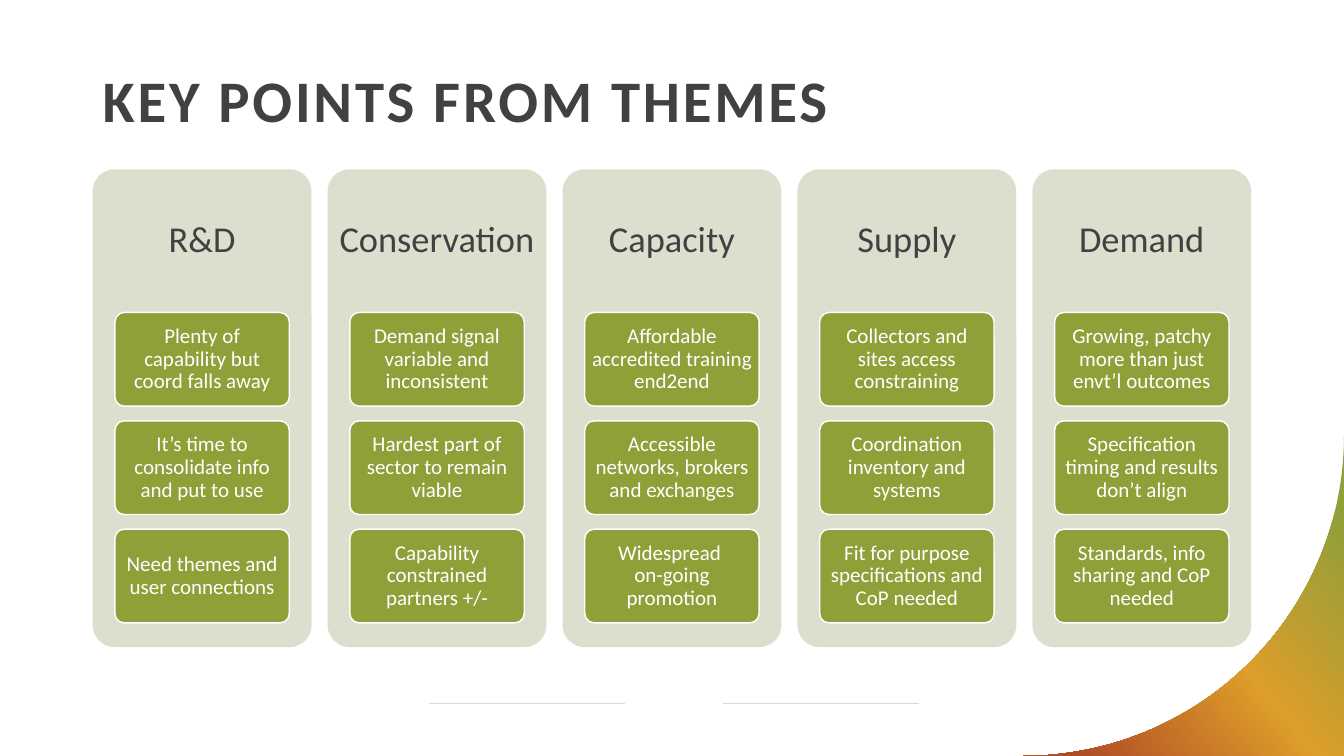
from copy import deepcopy
from dataclasses import dataclass
from math import cos, pi, sin

from pptx import Presentation
from pptx.dml.color import RGBColor
from pptx.enum.shapes import MSO_CONNECTOR as CONN, MSO_SHAPE as SHAPE
from pptx.enum.text import MSO_ANCHOR as ANCHOR, PP_ALIGN as ALIGN
from pptx.oxml.ns import qn
from pptx.oxml.xmlchemy import OxmlElement
from pptx.shapes.autoshape import Shape
from pptx.slide import Slide
from pptx.util import Inches, Pt

FONT = "Calibri"
COLORS = {
    "text": "414042", "white": "FFFFFF", "rule": "D9D8DA", "card": "DCDFCE",
    "green": "919F39", "amber": "DD9E2A", "rust": "AF4C26",
}
SLIDE_W, SLIDE_H = 13.33, 7.5

# Column grid
LEFT, TOP = 0.92, 1.68
CARD_W, CARD_H, CARD_PITCH = 2.17, 4.74, 2.33
HEAD_H = 1.42
TILE_W, TILE_H = 1.73, 0.93
TILE_TOP, LAST_TILE_TOP = 3.1, 5.25


@dataclass
class Theme:
    name: str
    points: list[str]


THEMES = [
    Theme("R&D", [
        "Plenty of capability but coord falls away",
        "It’s time to consolidate info and put to use",
        "Need themes and user connections"]),
    Theme("Conservation", [
        "Demand signal variable and inconsistent",
        "Hardest part of sector to remain viable",
        "Capability constrained partners +/-"]),
    Theme("Capacity", [
        "Affordable accredited training end2end",
        "Accessible networks, brokers and exchanges",
        "Widespread \non-going promotion"]),
    Theme("Supply", [
        "Collectors and sites access constraining",
        "Coordination inventory and systems",
        "Fit for purpose specifications and CoP needed"]),
    Theme("Demand", [
        "Growing, patchy more than just envt’l outcomes",
        "Specification timing and results don’t align",
        "Standards, info sharing and CoP needed"]),
]


def rgb(name: str) -> RGBColor:
    return RGBColor.from_string(COLORS[name])


def write(sp: Shape, text: str, size: float, color: str, inset: tuple[float, float],
          align: ALIGN = ALIGN.CENTER, anchor: ANCHOR = ANCHOR.MIDDLE,
          bold: bool = False, spacing: float = 0) -> None:
    tf = sp.text_frame
    tf.word_wrap = True
    tf.vertical_anchor = anchor
    tf.margin_left = tf.margin_right = Inches(inset[0])
    tf.margin_top = tf.margin_bottom = Inches(inset[1])
    p = tf.paragraphs[0]
    p.alignment = align
    p.line_spacing = 0.9
    for i, line in enumerate(text.split("\n")):
        if i:
            p.add_line_break()
        r = p.add_run()
        r.text = line
        r.font.name = FONT
        r.font.size = Pt(size)
        r.font.bold = bold
        r.font.color.rgb = rgb(color)
        if spacing:
            r.font._element.set("spc", str(int(spacing * 100)))


def add_text_box(s: Slide, x: float, y: float, w: float, h: float) -> Shape:
    return s.shapes.add_textbox(Inches(x), Inches(y), Inches(w), Inches(h))


def add_panel(s: Slide, x: float, y: float, w: float, h: float,
              fill: str, line: str | None = None) -> Shape:
    sp = s.shapes.add_shape(SHAPE.ROUNDED_RECTANGLE,
                            Inches(x), Inches(y), Inches(w), Inches(h))
    sp.adjustments[0] = 0.1
    sp.shadow.inherit = False
    sp.fill.solid()
    sp.fill.fore_color.rgb = rgb(fill)
    if line:
        sp.line.color.rgb = rgb(line)
        sp.line.width = Pt(1)
    else:
        sp.line.fill.background()
    return sp


def add_rule(s: Slide, x: float, y: float, w: float) -> None:
    ln = s.shapes.add_connector(CONN.STRAIGHT, Inches(x), Inches(y),
                                Inches(x + w), Inches(y))
    ln.line.color.rgb = rgb("rule")
    ln.line.width = Pt(0.5)
    ln._element.spPr.append(OxmlElement("a:effectLst"))


def add_corner(s: Slide, radius: float, steps: int = 60) -> None:
    cx, cy = SLIDE_W - radius, SLIDE_H - radius
    angles = [pi / 2 * i / steps for i in range(steps + 1)]
    arc = [(Inches(cx + radius * cos(a)), Inches(cy + radius * sin(a))) for a in angles]
    fb = s.shapes.build_freeform(Inches(SLIDE_W), Inches(SLIDE_H))
    fb.add_line_segments(arc, close=True)
    sp = fb.convert_to_shape()
    sp.shadow.inherit = False
    sp.line.fill.background()
    # Three-stop gradient
    sp.fill.gradient()
    sp.fill.gradient_angle = 220
    stops = sp._element.spPr.find(".//" + qn("a:gsLst"))
    stops.append(deepcopy(stops[0]))
    shades = [("green", 0.12), ("amber", 0.5), ("rust", 0.91)]
    for stop, (color, position) in zip(sp.fill.gradient_stops, shades):
        stop.color.rgb = rgb(color)
        stop.position = position


def add_theme(s: Slide, theme: Theme, x: float) -> None:
    add_panel(s, x, TOP, CARD_W, CARD_H, "card")
    write(add_text_box(s, x, TOP, CARD_W, HEAD_H), theme.name, 26, "text", (0.11, 0.11))
    pitch = (LAST_TILE_TOP - TILE_TOP) / (len(theme.points) - 1)
    for row, point in enumerate(theme.points):
        tile = add_panel(s, x + (CARD_W - TILE_W) / 2, TILE_TOP + row * pitch,
                         TILE_W, TILE_H, "green", "white")
        write(tile, point, 15, "white", (0.04, 0.03))


def main() -> None:
    prs = Presentation()
    prs.slide_width, prs.slide_height = Inches(SLIDE_W), Inches(SLIDE_H)
    s = prs.slides.add_slide(prs.slide_layouts[6])

    # Footer rules and corner
    for x in (4.25, 7.17):
        add_rule(s, x, 6.98, 1.95)
    add_corner(s, 3.18)

    # Title
    write(add_text_box(s, LEFT, 0.66, 11.5, 1.02), "KEY POINTS FROM THEMES", 42, "text",
          (0.1, 0.05), ALIGN.LEFT, ANCHOR.TOP, bold=True, spacing=2)

    # Theme columns
    for col, theme in enumerate(THEMES):
        add_theme(s, theme, LEFT + col * CARD_PITCH)

    prs.save("out.pptx")


if __name__ == "__main__":
    main()
